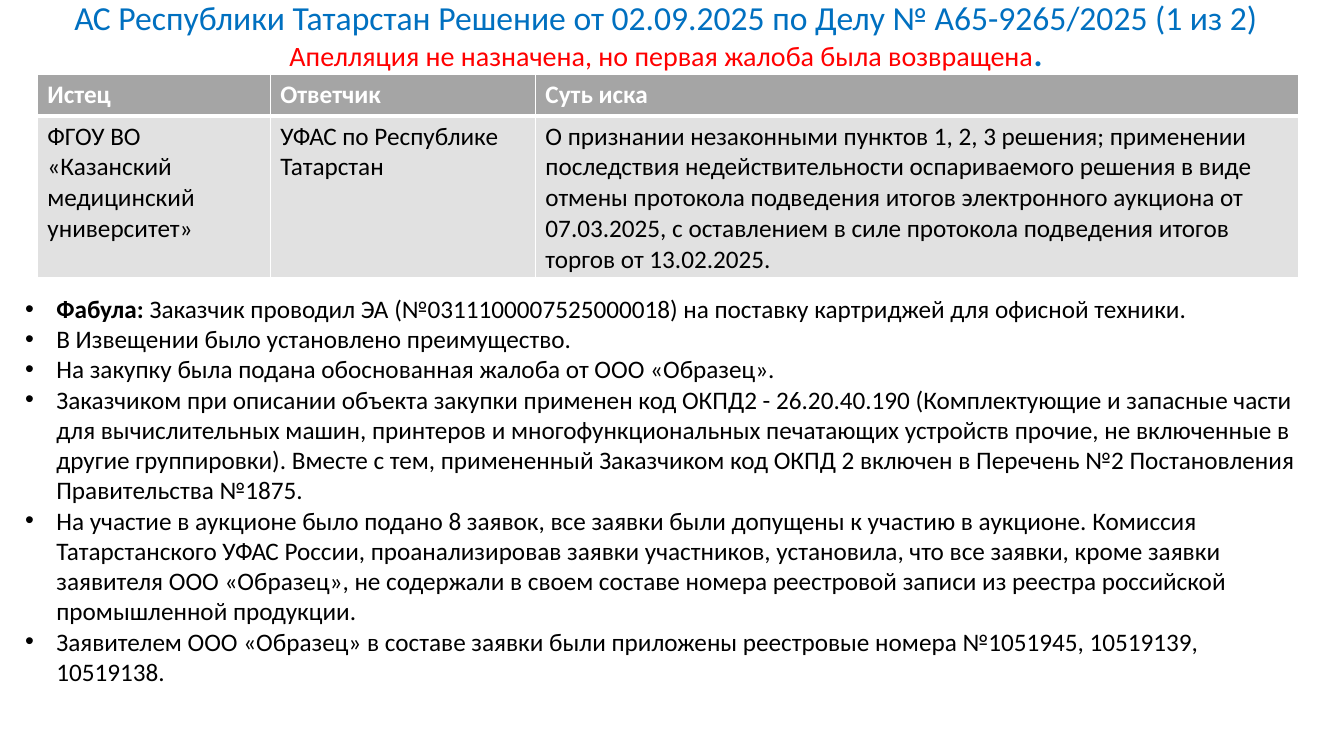
from lxml.etree import SubElement
from pptx import Presentation
from pptx.dml.color import RGBColor
from pptx.enum.text import MSO_ANCHOR, PP_ALIGN
from pptx.oxml.ns import qn
from pptx.util import Inches, Pt

BLUE, RED, BLACK, WHITE = "0070C0", "FF0000", "000000", "FFFFFF"
HEADER_GREY, BODY_GREY = "A5A5A5", "E1E1E1"

TITLE = [
    [("АС Республики Татарстан Решение от 02.09.2025 по Делу № А65-9265/2025 (1 из 2)",
      dict(size=24, color=BLUE))],
    [("Апелляция не назначена, но первая жалоба была возвращена",
      dict(size=20, color=RED)),
     (".", dict(size=24, color=BLUE, bold=True))],
]
CLAIM = [
    ["Истец", "Ответчик", "Суть иска"],
    ["ФГОУ ВО «Казанский медицинский университет»",
     "УФАС по Республике Татарстан",
     "О признании незаконными пунктов 1, 2, 3 решения; применении последствия "
     "недействительности оспариваемого решения в виде отмены протокола подведения "
     "итогов электронного аукциона от 07.03.2025, с оставлением в силе протокола "
     "подведения итогов торгов от 13.02.2025."],
]
FACTS = [
    [("Фабула: ", dict(bold=True)),
     ("Заказчик проводил ЭА (№0311100007525000018) на поставку картриджей "
      "для офисной техники.", {})],
    [("В Извещении было установлено преимущество.", {})],
    [("На закупку была подана обоснованная жалоба от ООО «Образец».", {})],
    [("Заказчиком при описании объекта закупки применен код ОКПД2 - 26.20.40.190 "
      "(Комплектующие и запасные части для вычислительных машин, принтеров и "
      "многофункциональных печатающих устройств прочие, не включенные в другие "
      "группировки). Вместе с тем, примененный Заказчиком код ОКПД 2 включен в "
      "Перечень №2 Постановления Правительства №1875.", {})],
    [("На участие в аукционе было подано 8 заявок, все заявки были допущены к участию "
      "в аукционе. Комиссия Татарстанского УФАС России, проанализировав заявки "
      "участников, установила, что все заявки, кроме заявки заявителя ООО «Образец», "
      "не содержали в своем составе номера реестровой записи из реестра российской "
      "промышленной продукции.", {})],
    [("Заявителем ООО «Образец» в составе заявки были приложены реестровые номера "
      "№1051945, 10519139, 10519138.", {})],
]


def rgb(code):
    return RGBColor.from_string(code)


def write(paragraph, text, size=18, color=BLACK, bold=False, font="Calibri"):
    run = paragraph.add_run()
    run.text = text
    run.font.name, run.font.size, run.font.bold = font, Pt(size), bold
    run.font.color.rgb = rgb(color)


def add_bullet(paragraph, indent=Inches(0.31)):
    properties = paragraph._p.get_or_add_pPr()
    properties.set("marL", str(indent))
    properties.set("indent", str(-indent))
    SubElement(properties, qn("a:buFont"), typeface="Arial")
    SubElement(properties, qn("a:buChar"), char="•")


def add_border(cell, side, points, color=WHITE):
    line = SubElement(cell._tc.get_or_add_tcPr(), qn(f"a:ln{side}"), w=str(Pt(points)))
    fill = SubElement(line, qn("a:solidFill"))
    SubElement(fill, qn("a:srgbClr"), val=color)


class CaseSlide:
    """Places elements by percentages of the slide's width and height."""

    def __init__(self, deck):
        self.width, self.height = deck.slide_width, deck.slide_height
        self.slide = deck.slides.add_slide(deck.slide_layouts[6])

    def across(self, percent):
        return round(self.width * percent / 100)

    def down(self, percent):
        return round(self.height * percent / 100)

    def text_frame(self, left, top, width, height):
        frame = self.slide.shapes.add_textbox(
            self.across(left), self.down(top),
            self.across(width), self.down(height)).text_frame
        frame.word_wrap = True
        return frame

    def title(self, lines, *place):
        frame = self.text_frame(*place)
        frame.vertical_anchor = MSO_ANCHOR.MIDDLE
        heading = frame.paragraphs[0]
        heading.alignment, heading.line_spacing = PP_ALIGN.CENTER, 0.9
        for number, line in enumerate(lines):
            if number:
                heading.add_line_break()
            for text, style in line:
                write(heading, text, **style)

    def bullets(self, items, *place):
        frame = self.text_frame(*place)
        for number, item in enumerate(items):
            paragraph = frame.add_paragraph() if number else frame.paragraphs[0]
            add_bullet(paragraph)
            for text, style in item:
                write(paragraph, text, **style)

    def table(self, rows, left, top, widths, heights):
        table = self.slide.shapes.add_table(
            len(rows), len(widths), self.across(left), self.down(top),
            self.across(sum(widths)), self.down(sum(heights))).table
        for column, width in zip(table.columns, widths):
            column.width = self.across(width)
        for r, (texts, height) in enumerate(zip(rows, heights)):
            table.rows[r].height = self.down(height)
            header = r == 0
            edges = dict(L=1, R=1, T=1 if header else 3, B=3 if header else 1)
            for c, text in enumerate(texts):
                cell = table.cell(r, c)
                for side, points in edges.items():
                    add_border(cell, side, points)
                cell.fill.solid()
                cell.fill.fore_color.rgb = rgb(HEADER_GREY if header else BODY_GREY)
                write(cell.text_frame.paragraphs[0], text,
                      color=WHITE if header else BLACK, bold=header)


def main():
    deck = Presentation()
    deck.slide_width, deck.slide_height = Inches(13.33), Inches(7.5)
    case = CaseSlide(deck)
    case.title(TITLE, 1.13, 1.07, 96.85, 7.87)
    case.table(CLAIM, 2.78, 9.87, widths=[17.33, 19.73, 56.79], heights=[5.47, 21.33])
    case.bullets(FACTS, 1.13, 38.13, 96.17, 53.87)
    deck.save("out.pptx")


if __name__ == "__main__":
    main()
